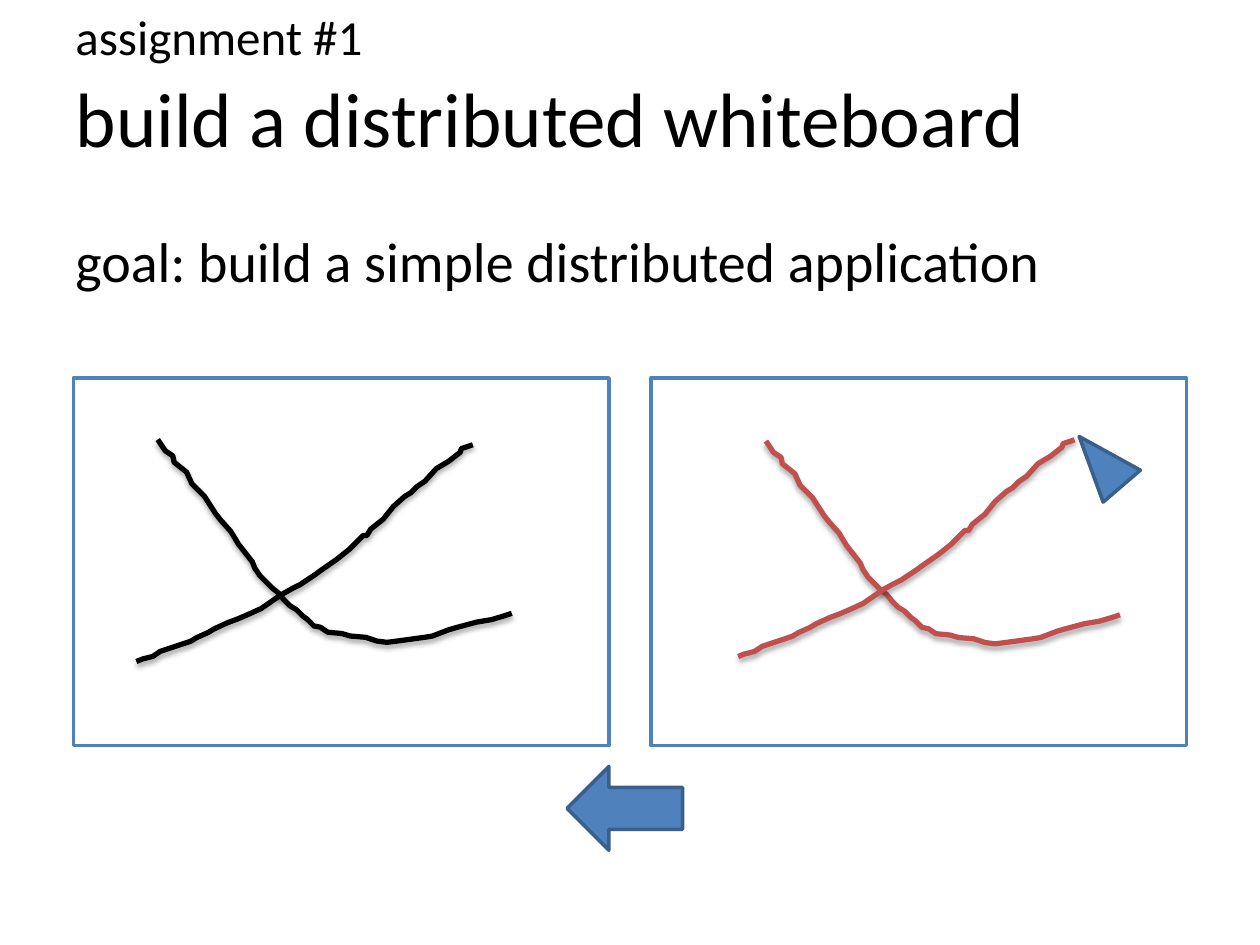
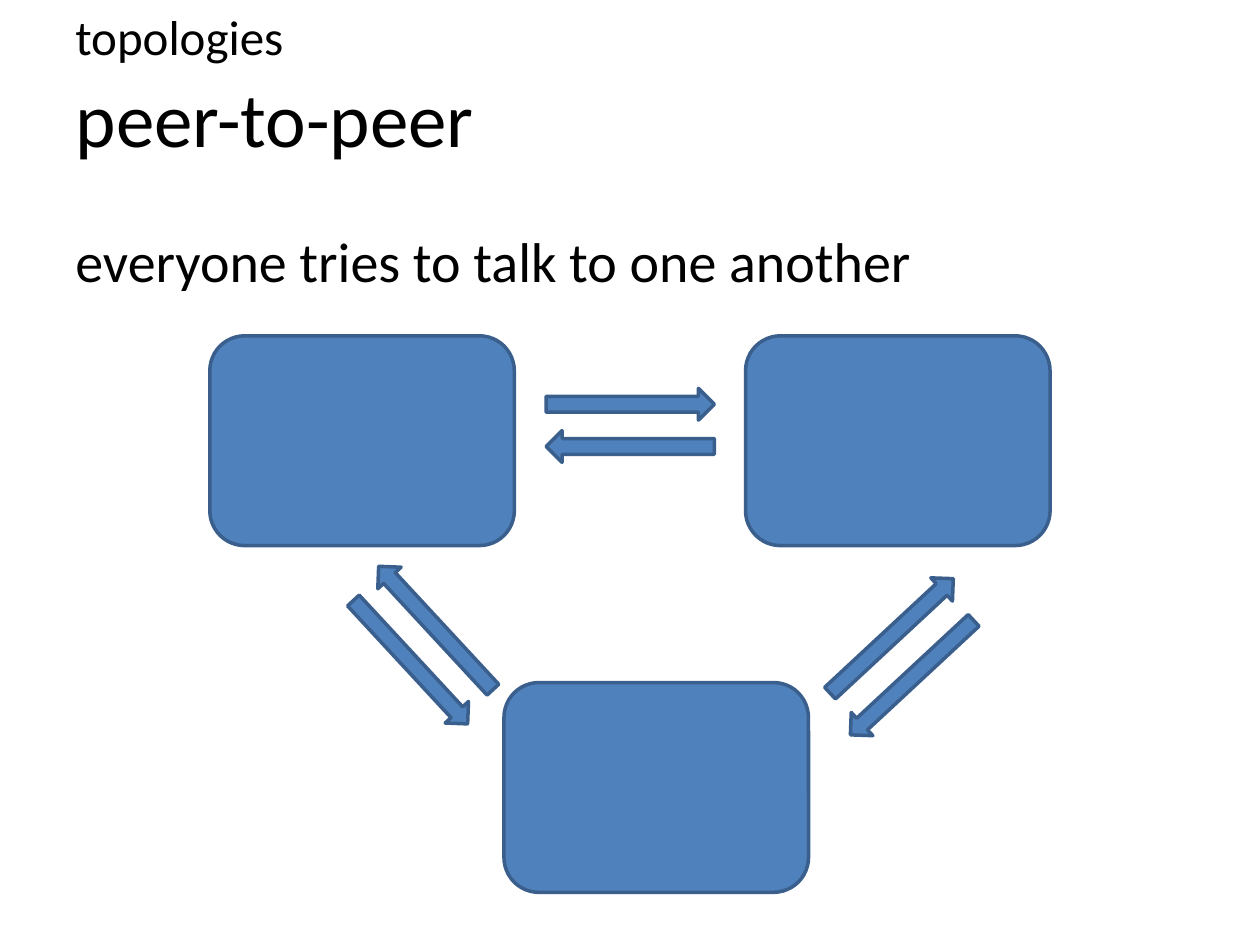
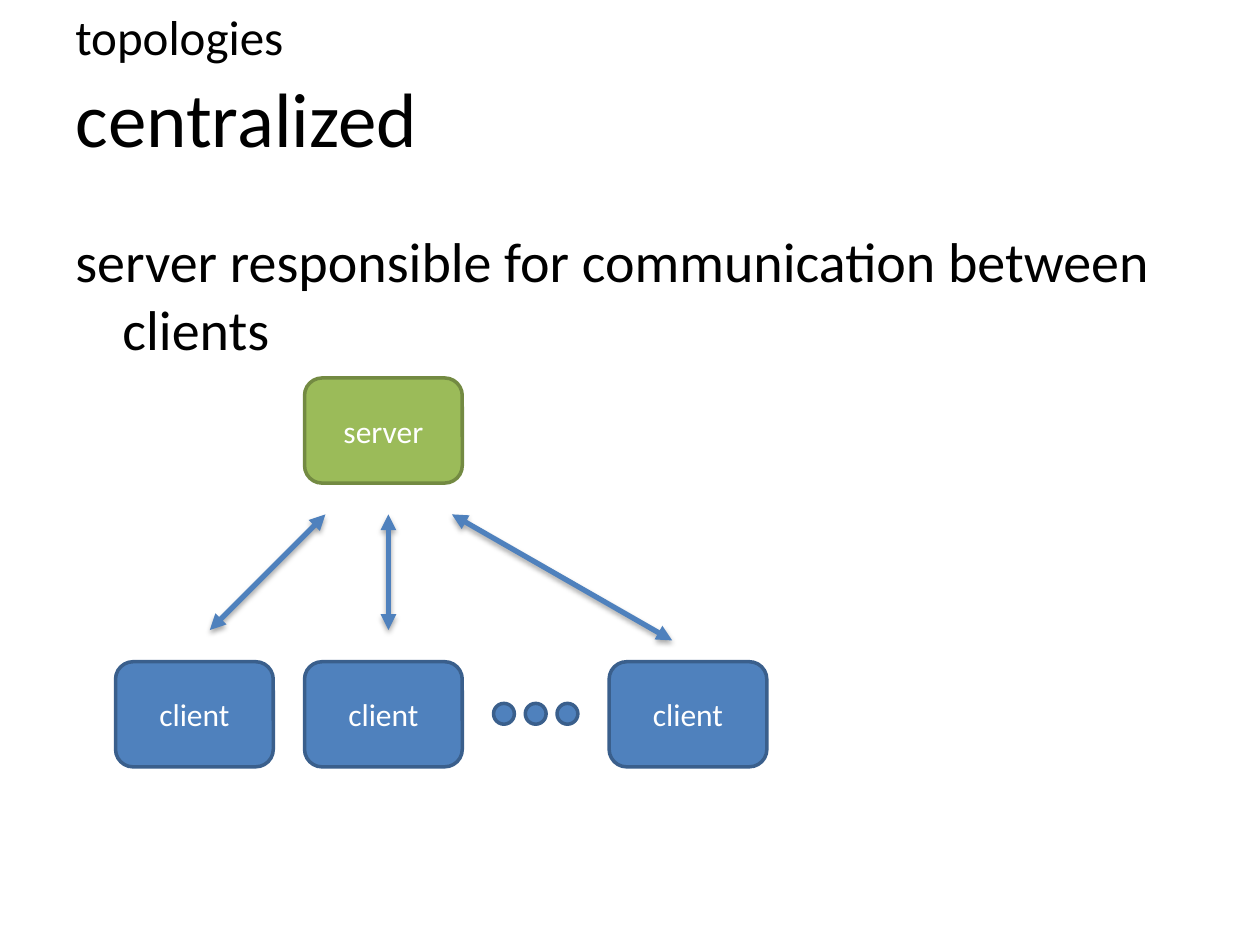
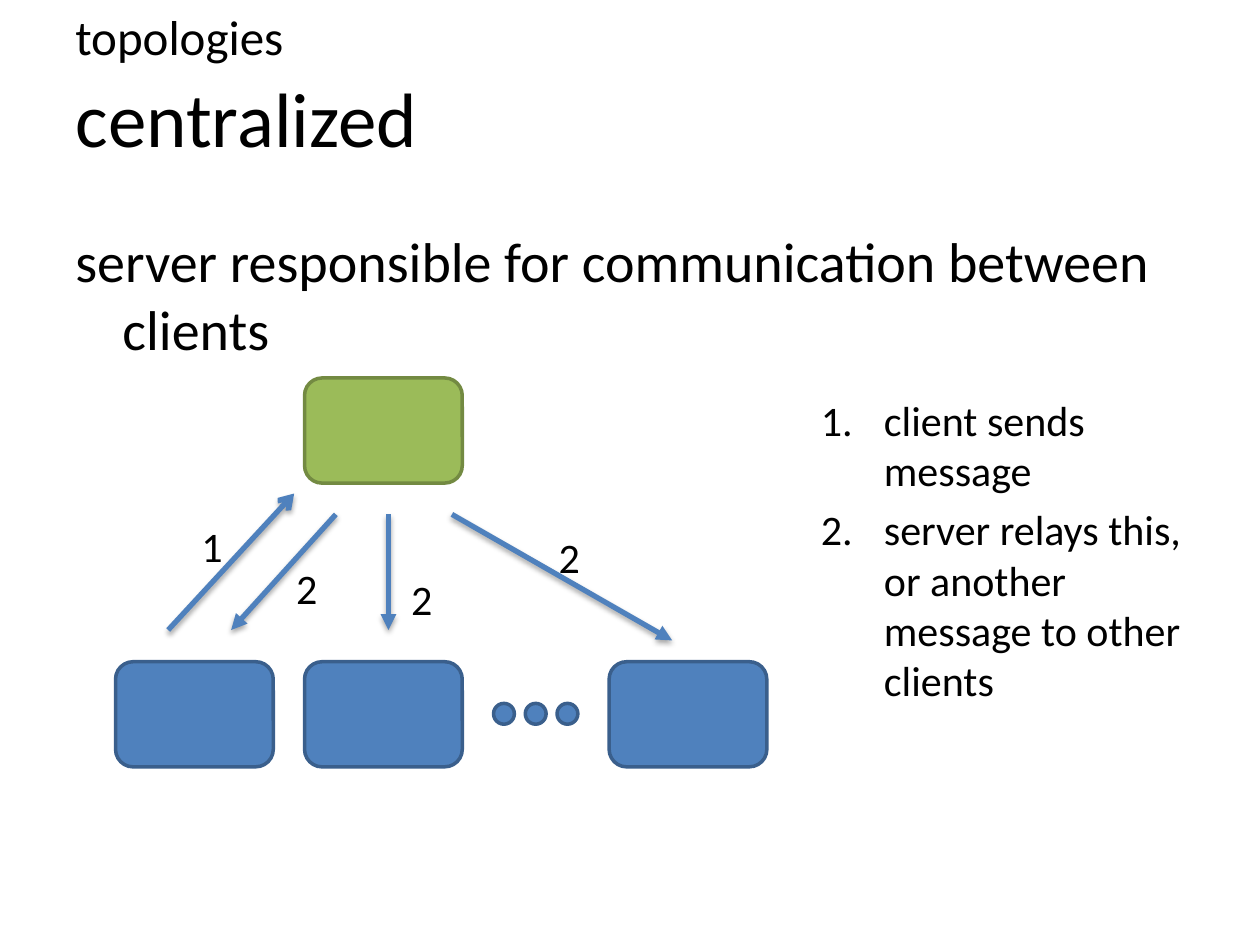
from dataclasses import dataclass

from lxml import etree
from pptx import Presentation
from pptx import util as u
from pptx.dml import color
from pptx.enum import shapes, text
from pptx.oxml import ns


@dataclass(frozen=True)
class Theme:
    """Colours, type sizes and line widths shared by all slides."""
    font: str = "Calibri"
    ink: str = "000000"
    paper: str = "FFFFFF"
    blue: str = "4F81BD"
    blue_edge: str = "3A5F8C"
    green: str = "9BBB59"
    green_edge: str = "738A42"
    red: str = "C0504D"
    title: int = 44
    body: int = 32
    kicker: int = 28
    note: int = 24
    label: int = 18
    outline: int = 2
    stroke: int = 3


THEME = Theme()
KIND = shapes.MSO_SHAPE
STROKE_UNIT = u.Cm(2.54) / 100
HANGING = 0.95
CLIENT_SIZE = (3.18, 2.12)
CLIENT_TOP = 13.34
CLIENT_LEFTS = (2.33, 6.14, 12.28)
SERVER_AT = (6.14, 7.62)
PEER_SIZE = (6.14, 4.23)
ARROW_SIZE = (3.39, 0.64)
CENTRE_LINK = ((7.83, 12.7), (7.83, 10.37))
RIGHT_LINK = ((13.55, 12.91), (9.11, 10.37))

DIP = [
    (0, 0), (6, 9), (12, 13), (13, 18), (23, 26), (27, 35), (37, 45), (46, 59),
    (50, 64), (58, 73), (64, 83), (75, 97), (77, 102), (81, 108), (91, 118),
    (96, 122), (100, 127), (105, 132), (110, 135), (115, 140), (119, 143),
    (124, 148), (129, 149), (135, 153), (146, 154), (153, 156), (165, 157),
    (174, 160), (182, 161), (190, 160), (212, 157), (218, 156), (231, 151),
    (238, 149), (253, 145), (265, 143), (275, 140), (281, 138),
]
RISE = [
    (267, 3), (258, 6), (257, 9), (248, 16), (238, 22), (229, 32), (223, 36),
    (218, 41), (213, 44), (204, 52), (196, 62), (186, 70), (183, 75), (180, 75),
    (169, 86), (159, 94), (146, 103), (142, 106), (130, 114), (124, 117),
    (115, 122), (99, 133), (88, 138), (81, 141), (73, 144), (62, 149), (57, 152),
    (48, 156), (43, 159), (34, 162), (19, 167), (13, 171), (5, 173), (0, 175),
]


def rgb(value):
    """Turn a hex string into a colour."""
    return color.RGBColor.from_string(value)


def apply(target, values):
    """Set every attribute named in a dict of format values."""
    for name, value in values.items():
        setattr(target, name, value)


def add_xml(parent, tag, **attributes):
    """Append a DrawingML element and return it."""
    child = etree.SubElement(parent, ns.qn("a:" + tag))
    for name, value in attributes.items():
        child.set(name, str(value))
    return child


class Deck:
    """Holds the style and the current slide and draws elements on it."""

    def __init__(self, theme):
        """Start an empty presentation."""
        self.theme = theme
        self.presentation = Presentation()
        apply(self.presentation, {"slide_width": u.Cm(25.4), "slide_height": u.Cm(19.05)})
        self.slide = None
        self.canvas = None

    def new_slide(self, kicker, title, body):
        """Add a slide with its title, body line and kicker."""
        self.slide = self.presentation.slides.add_slide(self.presentation.slide_layouts[5])
        self.canvas = self.slide.shapes
        heading = self.canvas.title
        self.place(heading, (1.27, 0.76), (22.86, 3.18))
        heading.text_frame.vertical_anchor = text.MSO_ANCHOR.MIDDLE
        self.add_words(heading.text_frame.paragraphs[0], title, self.theme.title)
        self.text((1.27, 4.45), (22.86, 12.57), [body], self.theme.body)
        self.text((1.27, 0), (22.86, 1.48), [kicker], self.theme.kicker)

    def place(self, shape, at, size):
        """Move and size a shape."""
        lengths = [u.Cm(value) for value in (*at, *size)]
        apply(shape, dict(zip(("left", "top", "width", "height"), lengths)))

    def add_words(self, paragraph, words, size, ink=None, align=text.PP_ALIGN.LEFT):
        """Put one formatted run into a paragraph."""
        paragraph.alignment = align
        run = paragraph.add_run()
        run.text = words
        apply(run.font, {"name": self.theme.font, "size": u.Pt(size)})
        run.font.color.rgb = rgb(ink or self.theme.ink)

    def text(self, at, size, lines, points, indent=HANGING, numbered=False):
        """Add a text box with hanging paragraphs."""
        box = self.canvas.add_textbox(*[u.Cm(value) for value in (*at, *size)])
        frame = box.text_frame
        frame.word_wrap = True
        for index, line in enumerate(lines):
            paragraph = frame.add_paragraph() if index else frame.paragraphs[0]
            self.add_words(paragraph, line, points)
            properties = paragraph._p.get_or_add_pPr()
            properties.set("marL", str(u.Cm(indent)))
            properties.set("indent", str(-u.Cm(indent)))
            add_xml(add_xml(properties, "spcBef"), "spcPct", val=20000)
            if numbered:
                add_xml(properties, "buAutoNum", type="arabicPeriod")

    def outline(self, shape, ink, width):
        """Colour and size the line of a shape or connector."""
        shape.line.color.rgb = rgb(ink)
        shape.line.width = u.Pt(width)

    def shape(self, kind, at, size, fill=None, edge=None, rotation=0, words=""):
        """Add a preset shape, with a centred label if given."""
        shape = self.canvas.add_shape(kind, *[u.Cm(value) for value in (*at, *size)])
        shape.rotation = rotation
        shape.shadow.inherit = False
        shape.fill.solid()
        shape.fill.fore_color.rgb = rgb(fill or self.theme.blue)
        self.outline(shape, edge or self.theme.blue_edge, self.theme.outline)
        if words:
            shape.text_frame.vertical_anchor = text.MSO_ANCHOR.MIDDLE
            self.add_words(shape.text_frame.paragraphs[0], words, self.theme.label,
                           self.theme.paper, text.PP_ALIGN.CENTER)

    def soft_shadow(self, shape):
        """Give a stroke a soft shadow below it."""
        effects = add_xml(shape.element.spPr, "effectLst")
        shadow = add_xml(effects, "outerShdw", blurRad=u.Pt(3.1), dist=u.Pt(1.8),
                         dir=5400000, rotWithShape=0)
        add_xml(add_xml(shadow, "srgbClr", val=self.theme.ink), "alpha", val=35000)

    def stroke(self, points, at, ink):
        """Draw a freehand stroke."""
        builder = self.canvas.build_freeform(*points[0], scale=STROKE_UNIT)
        builder.add_line_segments(points[1:], close=False)
        shape = builder.convert_to_shape(*[u.Cm(value) for value in at])
        shape.fill.background()
        self.outline(shape, ink, self.theme.stroke)
        self.soft_shadow(shape)

    def link(self, start, end, head=None, tail=None):
        """Draw a straight connector with optional arrowheads."""
        connector = self.canvas.add_connector(
            shapes.MSO_CONNECTOR.STRAIGHT, *[u.Cm(value) for value in (*start, *end)])
        self.outline(connector, self.theme.blue, self.theme.stroke)
        line = connector.element.spPr.find(ns.qn("a:ln"))
        for tag, kind in (("headEnd", head), ("tailEnd", tail)):
            if kind:
                add_xml(line, tag, type=kind)
        self.soft_shadow(connector)

    def group(self):
        """Draw the following elements into a new group."""
        self.canvas = self.slide.shapes.add_group_shape().shapes

    def step(self, number, at):
        """Label a link with its step number."""
        self.text(at, (0.85, 0.85), [number], self.theme.note)

    def network(self, client="", server=""):
        """Draw the clients, the dots between them and the server."""
        for left in CLIENT_LEFTS:
            self.shape(KIND.ROUNDED_RECTANGLE, (left, CLIENT_TOP), CLIENT_SIZE, words=client)
        for index in range(3):
            self.shape(KIND.OVAL, (9.95 + index * 0.64, 14.18), (0.42, 0.42))
        self.shape(KIND.ROUNDED_RECTANGLE, SERVER_AT, CLIENT_SIZE, self.theme.green,
                   self.theme.green_edge, words=server)


def whiteboard(deck):
    """Build the assignment slide."""
    theme = deck.theme
    deck.new_slide("assignment #1", "build a distributed whiteboard",
                   "goal: build a simple distributed application")
    for left in (1.48, 13.12):
        deck.shape(KIND.RECTANGLE, (left, 7.62), (10.8, 7.41), theme.paper, theme.blue)
    deck.stroke(DIP, (3.18, 8.86), theme.ink)
    deck.shape(KIND.ISOSCELES_TRIANGLE, (21.69, 8.64), (0.99, 1.32), rotation=319.4)
    deck.stroke(DIP, (15.44, 8.89), theme.red)
    deck.shape(KIND.RIGHT_ARROW, (11.43, 15.45), (2.33, 1.69), rotation=180)
    deck.stroke(RISE, (14.88, 8.79), theme.red)
    deck.stroke(RISE, (2.75, 8.89), theme.ink)


def peer_to_peer(deck):
    """Build the peer-to-peer slide."""
    deck.new_slide("topologies", "peer-to-peer", "everyone tries to talk to one another")
    for at in ((4.23, 6.77), (15.03, 6.77), (10.16, 13.76)):
        deck.shape(KIND.ROUNDED_RECTANGLE, at, PEER_SIZE)
    arrows = (
        (11.01, 7.83, 0), (11.01, 8.68, 180),
        (16.28, 12.5, 317.1), (16.69, 13.34, 137.1),
        (7.09, 12.34, 227.2), (6.58, 13.03, 47.2),
    )
    for left, top, rotation in arrows:
        deck.shape(KIND.RIGHT_ARROW, (left, top), ARROW_SIZE, rotation=rotation)


def centralized(deck):
    """Start a slide on the centralized topology."""
    deck.new_slide("topologies", "centralized",
                   "server responsible for communication between clients")


def centralized_overview(deck):
    """Build the slide with the two-way links."""
    centralized(deck)
    deck.network("client", "server")
    for start, end in (((4.23, 12.7), (6.56, 10.37)), CENTRE_LINK, RIGHT_LINK):
        deck.link(start, end, "triangle", "triangle")


def centralized_messages(deck):
    """Build the slide with the numbered messages."""
    centralized(deck)
    deck.network()
    deck.text((16.3, 7.83), (7.83, 8.05),
              ["client sends message", "server relays this, or another message to other clients"],
              deck.theme.note, indent=1.27, numbered=True)
    deck.group()
    deck.link((3.39, 12.7), (5.93, 9.95), tail="arrow")
    deck.step("1", (3.81, 10.37))
    deck.group()
    for start, end in (((4.66, 12.7), (6.77, 10.37)), CENTRE_LINK, RIGHT_LINK):
        deck.link(start, end, head="triangle")
    for at in ((5.72, 11.22), (8.04, 11.43), (11.01, 10.58)):
        deck.step("2", at)


def main():
    """Build and save the presentation."""
    deck = Deck(THEME)
    for build in (whiteboard, peer_to_peer, centralized_overview, centralized_messages):
        build(deck)
    deck.presentation.save("out.pptx")


if __name__ == "__main__":
    main()
